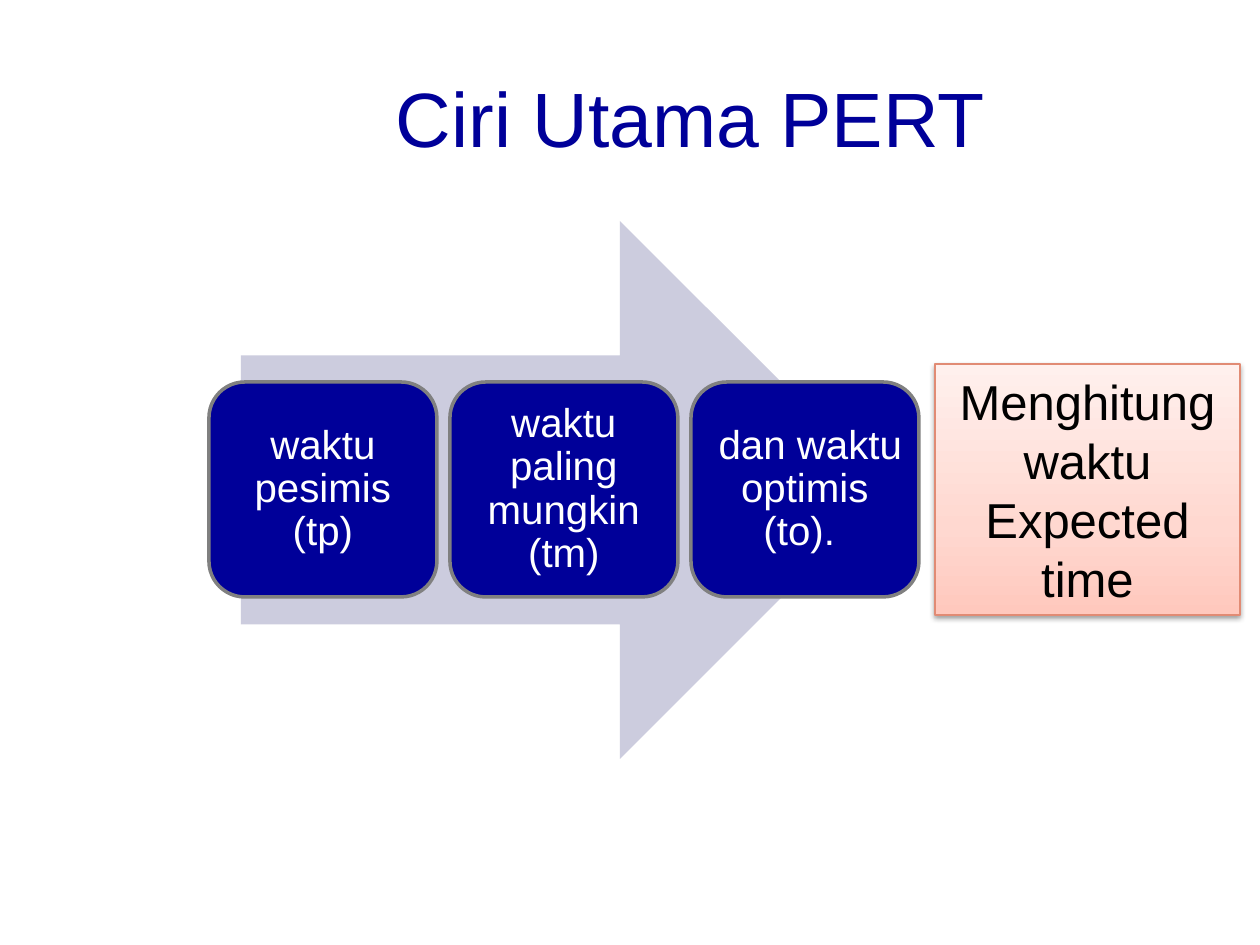
from lxml import etree
from pptx import Presentation
from pptx import util as u
from pptx.dml.color import RGBColor
from pptx.enum import shapes, text
from pptx.oxml import parse_xml
from pptx.oxml.ns import nsdecls, qn

PX_PER_INCH = 126


def px(length):
    return u.Emu(round(length * 914400 / PX_PER_INCH))


def rgb(value):
    return RGBColor.from_string(value)


class Page:
    font = "Arial"
    navy = "000099"
    lavender = "CCCCDE"
    gray = "808080"
    white = "FFFFFF"
    black = "000000"
    coral = "E18B74"
    blush = ((0, "FFC8BD"), (35, "FFD8D0"), (100, "FFF0ED"))

    def __init__(self, deck):
        self.slide = deck.slides.add_slide(deck.slide_layouts[5])

    def label(self, box, lines, size, color, spacing=None):
        frame = box.text_frame
        frame.word_wrap = True
        frame.auto_size = text.MSO_AUTO_SIZE.NONE
        frame.vertical_anchor = text.MSO_ANCHOR.MIDDLE
        frame.text = "\n".join(lines)
        for para in frame.paragraphs:
            para.alignment = text.PP_ALIGN.CENTER
            para.line_spacing = spacing
            para.font.name = self.font
            para.font.size = u.Pt(size)
            para.font.color.rgb = rgb(color)

    def title(self, words, left, top, width, height):
        box = self.slide.shapes.title
        box.left, box.top, box.width, box.height = map(px, (left, top, width, height))
        self.label(box, [words], 44, self.navy)

    def shape(self, kind, left, top, width, height, fill=None, line=None, weight=1):
        box = self.slide.shapes.add_shape(kind, *map(px, (left, top, width, height)))
        box.shadow.inherit = False
        if fill:
            box.fill.solid()
            box.fill.fore_color.rgb = rgb(fill)
        if line:
            box.line.color.rgb = rgb(line)
            box.line.width = u.Pt(weight)
        else:
            box.line.fill.background()
        return box

    def arrow(self, left, top, width, height):
        self.shape(shapes.MSO_SHAPE.RIGHT_ARROW, left, top, width, height, self.lavender)

    def step(self, words, left, top, width, height):
        box = self.shape(shapes.MSO_SHAPE.ROUNDED_RECTANGLE, left, top, width, height,
                         self.navy, self.gray, 2)
        frame = box.text_frame
        frame.margin_left = frame.margin_right = px(2)
        frame.margin_top = frame.margin_bottom = px(2)
        self.label(box, [words], 23, self.white, 0.9)

    def result(self, lines, left, top, width, height):
        box = self.shape(shapes.MSO_SHAPE.RECTANGLE, left, top, width, height,
                         line=self.coral, weight=0.75)
        stops = "".join(
            f'<a:gs pos="{place * 1000}"><a:srgbClr val="{color}"/></a:gs>'
            for place, color in self.blush)
        properties = box.element.spPr
        properties.find(qn("a:prstGeom")).addnext(parse_xml(
            f'<a:gradFill {nsdecls("a")} rotWithShape="1"><a:gsLst>{stops}</a:gsLst>'
            '<a:lin ang="16200000" scaled="1"/></a:gradFill>'))
        shadow = etree.SubElement(
            properties.find(qn("a:effectLst")), qn("a:outerShdw"),
            blurRad=str(u.Pt(3.1)), dist=str(u.Pt(1.6)), dir="5400000", rotWithShape="0")
        color = etree.SubElement(shadow, qn("a:srgbClr"), val=self.black)
        etree.SubElement(color, qn("a:alpha"), val="38000")
        self.label(box, lines, 28, self.black)


def main():
    deck = Presentation()
    deck.slide_width, deck.slide_height = u.Inches(10), u.Inches(7.5)
    page = Page(deck)
    page.title("Ciri Utama PERT", 184, 38, 1013, 158)
    page.arrow(241, 221, 648, 538)
    steps = ("waktu pesimis (tp)", "waktu paling mungkin (tm)", " dan waktu optimis (to). ")
    width, gap = 228, 13
    for index, words in enumerate(steps):
        page.step(words, 209 + index * (width + gap), 382, width, 215)
    page.result(["Menghitung waktu", "Expected time"], 935, 364, 305, 251)
    deck.save("out.pptx")


if __name__ == "__main__":
    main()
